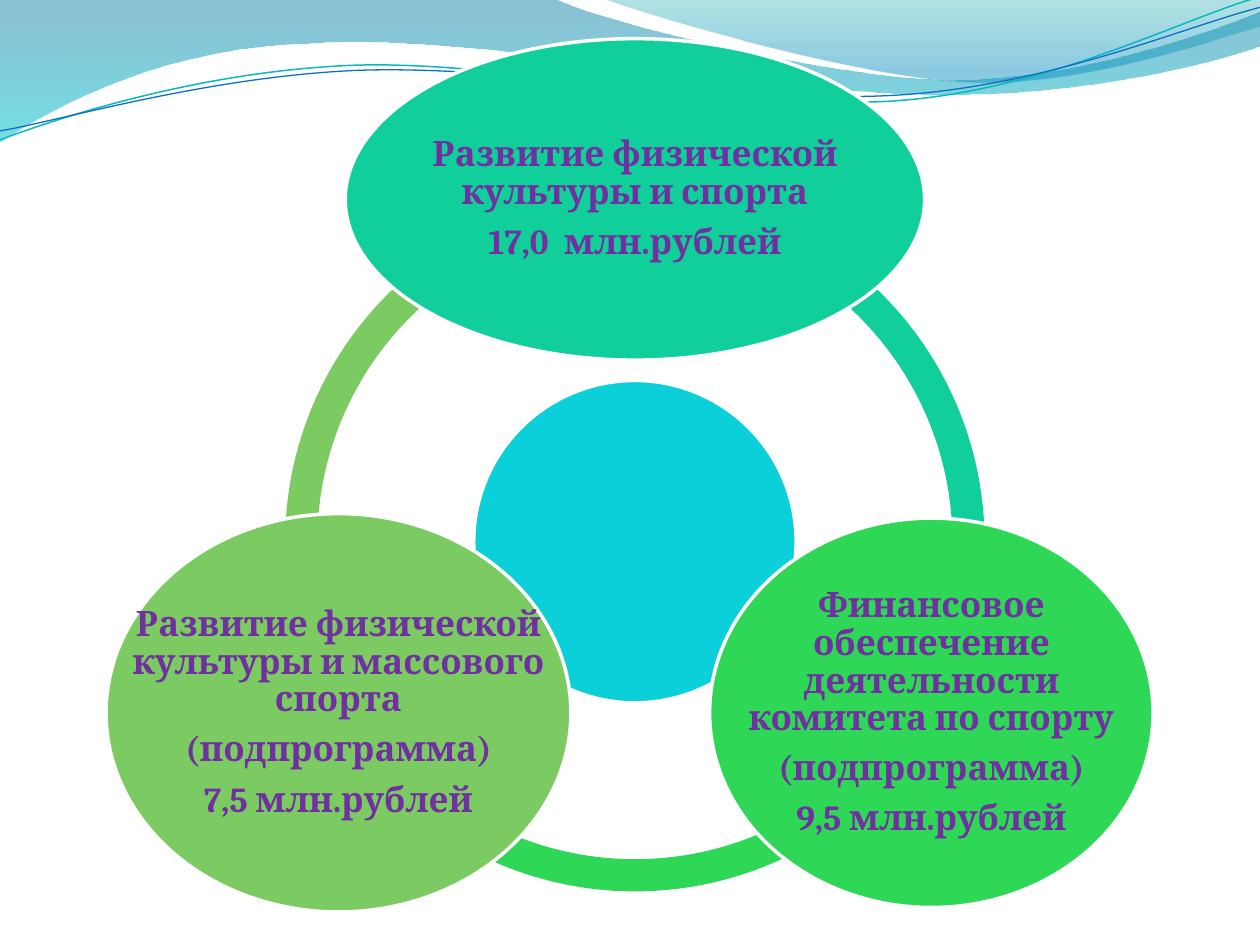
from dataclasses import dataclass
from math import cos, radians, sin

from lxml import etree
from pptx import Presentation
from pptx.dml.color import RGBColor
from pptx.enum.shapes import MSO_SHAPE
from pptx.enum.text import MSO_ANCHOR, PP_ALIGN
from pptx.oxml.ns import qn
from pptx.shapes.autoshape import Shape
from pptx.shapes.shapetree import SlideShapes
from pptx.util import Cm, Pt

ELLIPSE, BLOCK_ARC = MSO_SHAPE.OVAL, MSO_SHAPE.BLOCK_ARC
MIDDLE, CENTER = MSO_ANCHOR.MIDDLE, PP_ALIGN.CENTER

WHITE = RGBColor(0xFF, 0xFF, 0xFF)
PURPLE = RGBColor(0x70, 0x30, 0xA0)
TURQUOISE = RGBColor(0x0B, 0xD0, 0xD9)
EMERALD = RGBColor(0x10, 0xCF, 0x9B)
GREEN = RGBColor(0x2F, 0xD7, 0x57)
OLIVE = RGBColor(0x7C, 0xCA, 0x62)
DEEP_BLUE = RGBColor(0x00, 0x74, 0xA1)
CYAN = RGBColor(0x00, 0xC6, 0xCF)
TEAL = RGBColor(0x00, 0xA1, 0xA9)
SKY = RGBColor(0x00, 0x8B, 0xBF)
LINE_TEAL = RGBColor(0x0A, 0xB8, 0xBF)
LINE_BLUE = RGBColor(0x0F, 0x6F, 0xC6)

# Diagram measures in centimetres, angles clockwise in degrees
CENTER_X, CENTER_Y = 12.8, 10.92
RING_SIZE, HUB_SIZE, ORBIT = 14.1, 6.5, 6.9
ARC_SWEEP, ARC_THICKNESS = 120, 0.046

Point = tuple[float, float]


@dataclass
class Stop:
    position: float
    color: RGBColor
    opacity: int


@dataclass
class Wave:
    """Segments hold one point for a line, three for a Bezier curve."""
    start: Point
    segments: list[tuple[Point, ...]]
    stops: tuple[Stop, ...] = ()
    line_color: RGBColor = WHITE
    line_width: float = 0


@dataclass
class Program:
    angle: int
    width: float
    height: float
    color: RGBColor
    lines: tuple[str, ...]


WAVES = [
    Wave((0, 0), [
        ((11.18, -0.03),),
        ((12.09, 0.43), (16.87, 1.6), (19.25, 1.6)),
        ((21.67, 1.6), (24.33, 0.66), (25.4, 0.23)),
        ((25.43, 0.91),),
        ((24.97, 1.12), (22.1, 1.93), (18.95, 1.91)),
        ((15.8, 1.91), (9.7, 0.71), (6.53, 0.86)),
        ((3.28, 0.91), (1.17, 2.11), (-0.03, 2.87)),
    ], stops=(Stop(0, DEEP_BLUE, 45), Stop(1, CYAN, 55))),
    Wave((12.17, -0.03), [
        ((12.93, 0.28), (17.32, 1.57), (19.53, 1.65)),
        ((21.74, 1.75), (24.41, 0.81), (25.4, 0.53)),
        ((25.4, 0),),
    ], stops=(Stop(0, TEAL, 30), Stop(0.8, SKY, 45))),
    Wave((0, 2.82), [
        ((1.22, 2.36), (4.01, 1.45), (7.04, 1.32)),
        ((10.03, 1.19), (15.06, 2.26), (18.11, 2.03)),
        ((21.16, 1.8), (23.83, 0.38), (25.35, -0.05)),
    ], line_color=LINE_TEAL, line_width=0.85),
    Wave((0, 2.64), [
        ((1.19, 2.44), (4.17, 1.55), (7.19, 1.42)),
        ((10.24, 1.3), (15.16, 2.13), (18.21, 1.91)),
        ((21.23, 1.7), (23.9, 0.53), (25.4, 0.15)),
    ], line_color=LINE_BLUE, line_width=0.75),
]

PROGRAMS = [
    Program(270, 11.68, 6.48, EMERALD,
            ("Развитие физической культуры и спорта", "17,0  млн.рублей")),
    Program(30, 8.94, 7.85, GREEN,
            ("Финансовое обеспечение деятельности комитета по спорту",
             "(подпрограмма)", "9,5 млн.рублей")),
    Program(150, 9.37, 8.03, OLIVE,
            ("Развитие физической культуры и массового спорта",
             "(подпрограмма)", "7,5 млн.рублей")),
]


def bend_curves(band: Shape, segments: list[tuple[Point, ...]]) -> None:
    """Turn each run of three straight steps into one Bezier curve."""
    steps = iter(list(band._element.iter(qn("a:lnTo"))))
    for segment in segments:
        run = [next(steps) for _ in segment]
        if len(run) == 3:
            curve = run[0].makeelement(qn("a:cubicBezTo"))
            run[0].addprevious(curve)
            for step in run:
                curve.append(step[0])
                step.getparent().remove(step)


def draw_wave(shapes: SlideShapes, wave: Wave) -> None:
    points = [point for segment in wave.segments for point in segment]
    builder = shapes.build_freeform(Cm(wave.start[0]), Cm(wave.start[1]))
    builder.add_line_segments([(Cm(x), Cm(y)) for x, y in points], close=bool(wave.stops))
    band = builder.convert_to_shape()
    bend_curves(band, wave.segments)
    band.shadow.inherit = False
    if not wave.stops:
        band.fill.background()
        band.line.color.rgb = wave.line_color
        band.line.width = Pt(wave.line_width)
        return
    band.line.fill.background()
    band.fill.gradient()
    band.fill.gradient_angle = 270
    for target, stop in zip(band.fill.gradient_stops, wave.stops):
        target.position = stop.position
        target.color.rgb = stop.color
    for color, stop in zip(band._element.iter(qn("a:srgbClr")), wave.stops):
        etree.SubElement(color, qn("a:alpha"), val=str(stop.opacity * 1000))


def frame(x: float, y: float, width: float, height: float) -> tuple[Cm, ...]:
    return Cm(x - width / 2), Cm(y - height / 2), Cm(width), Cm(height)


def draw_solid(shapes: SlideShapes, kind: MSO_SHAPE, box: tuple[Cm, ...],
               color: RGBColor, outlined: bool = True) -> Shape:
    solid = shapes.add_shape(kind, *box)
    solid.shadow.inherit = False
    solid.fill.solid()
    solid.fill.fore_color.rgb = color
    if outlined:
        solid.line.color.rgb = WHITE
        solid.line.width = Pt(2)
    else:
        solid.line.fill.background()
    return solid


def draw_arc(shapes: SlideShapes, program: Program) -> None:
    arc = draw_solid(shapes, BLOCK_ARC, frame(CENTER_X, CENTER_Y, RING_SIZE, RING_SIZE),
                     program.color, outlined=False)
    # One degree is 60000 units; an adjustment of 1 is 100000
    arc.adjustments[0] = program.angle * 0.6
    arc.adjustments[1] = (program.angle + ARC_SWEEP) % 360 * 0.6
    arc.adjustments[2] = ARC_THICKNESS


def draw_program(shapes: SlideShapes, program: Program) -> None:
    angle = radians(program.angle)
    box = frame(CENTER_X + ORBIT * cos(angle), CENTER_Y + ORBIT * sin(angle),
                program.width, program.height)
    draw_solid(shapes, ELLIPSE, box, program.color)
    caption = shapes.add_textbox(*box).text_frame
    caption.word_wrap = True
    caption.vertical_anchor = MIDDLE
    caption.margin_left = caption.margin_right = Cm(0.08)
    caption.margin_top = caption.margin_bottom = Cm(0.08)
    caption.text = "\n".join(program.lines)
    for paragraph in caption.paragraphs:
        paragraph.alignment = CENTER
        paragraph.line_spacing = 0.9
        paragraph.space_after = Pt(7)
        paragraph.font.name = "Cambria"
        paragraph.font.size = Pt(20)
        paragraph.font.bold = True
        paragraph.font.color.rgb = PURPLE


def main() -> None:
    deck = Presentation()
    deck.slide_width, deck.slide_height = Cm(25.4), Cm(19.05)
    shapes = deck.slides.add_slide(deck.slide_layouts[6]).shapes

    # Wavy header
    for wave in WAVES:
        draw_wave(shapes, wave)

    # Ring, hub and programs around it
    for program in reversed(PROGRAMS):
        draw_arc(shapes, program)
    draw_solid(shapes, ELLIPSE, frame(CENTER_X, CENTER_Y, HUB_SIZE, HUB_SIZE), TURQUOISE)
    for program in PROGRAMS:
        draw_program(shapes, program)

    deck.save("out.pptx")


if __name__ == "__main__":
    main()
